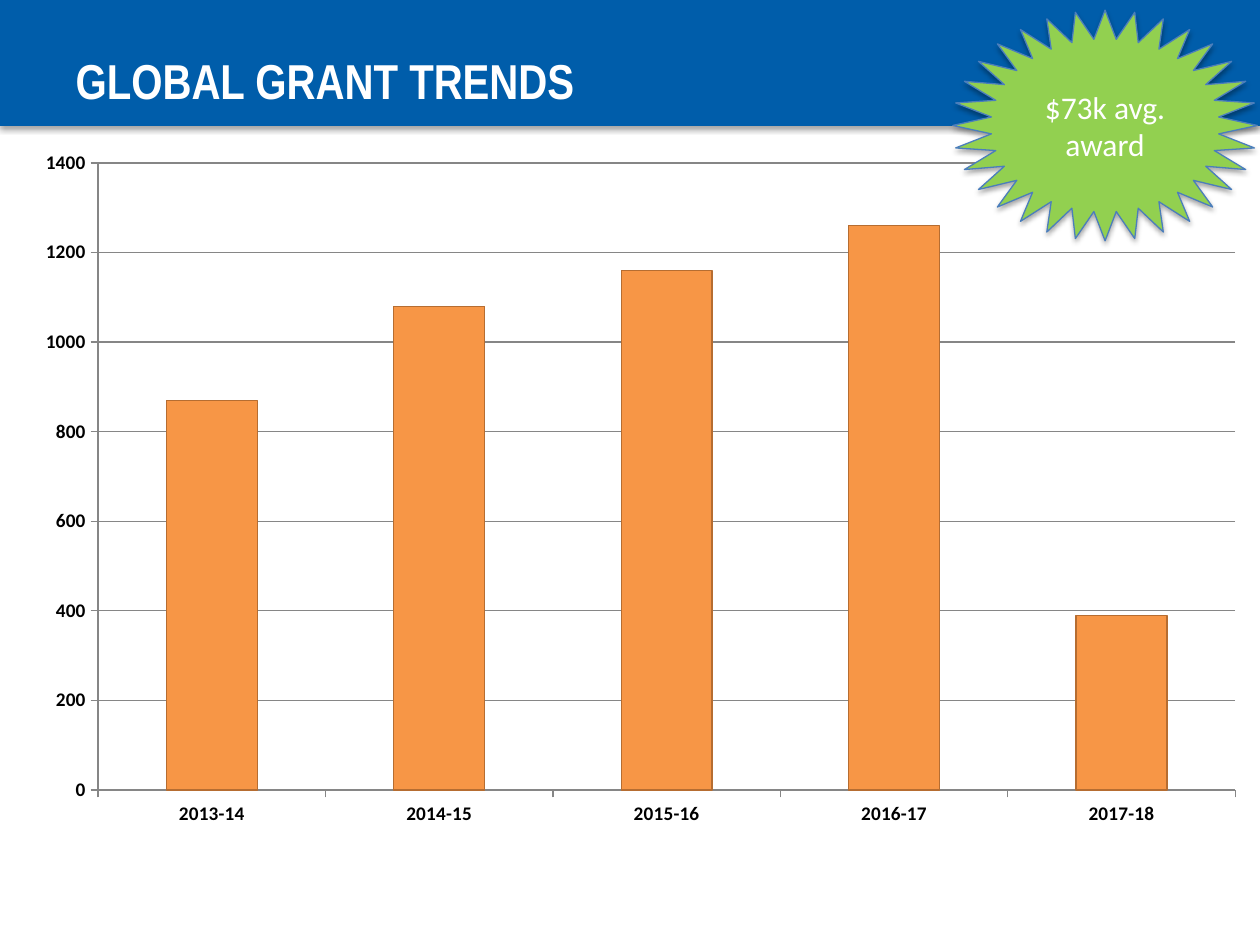
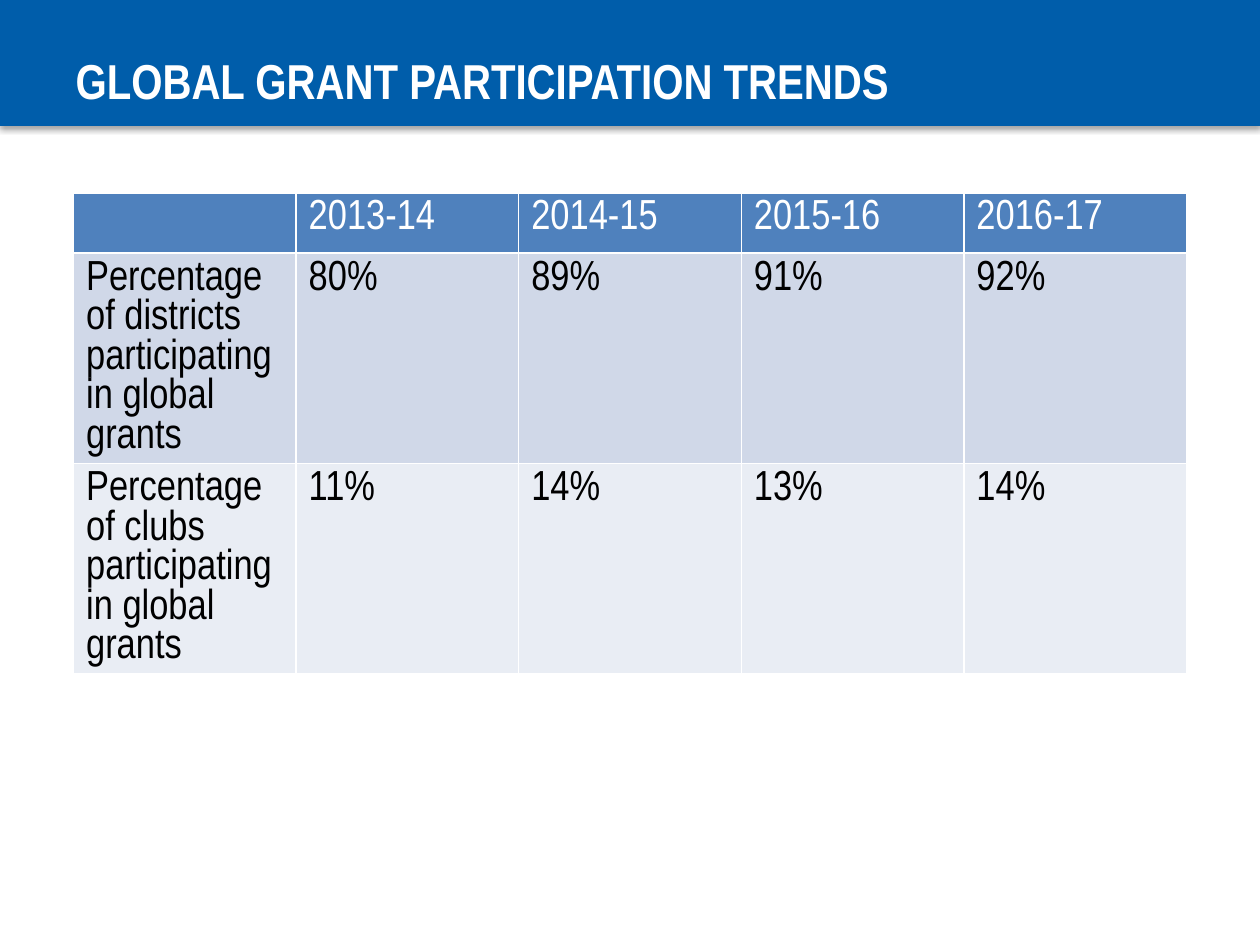
from dataclasses import dataclass

from pptx import Presentation
from pptx.chart.data import CategoryChartData
from pptx.dml.color import RGBColor
from pptx.enum.chart import XL_CHART_TYPE as ChartType, XL_TICK_MARK as TickMark
from pptx.enum.shapes import MSO_SHAPE as Preset
from pptx.enum.text import MSO_ANCHOR as Anchor, MSO_AUTO_SIZE as AutoSize, PP_ALIGN as Align
from pptx.oxml import parse_xml
from pptx.oxml.ns import nsdecls, qn
from pptx.util import Pt

HEADING_FONT = "Arial Narrow"
BODY_FONT = "Calibri"
BLUE = "005DAA"
WHITE = "FFFFFF"
BLACK = "000000"
ORANGE = "F79646"
BAR_EDGE = "B66D31"
AXIS_GREY = "868686"
GREEN = "92D050"
STAR_EDGE = "4B7EBC"
HEADER_FILL = "4F81BD"
ROW_FILLS = ("D0D8E8", "E9EDF4")

GRANTS = {"2013-14": 870, "2014-15": 1080, "2015-16": 1160, "2016-17": 1260, "2017-18": 390}
PARTICIPATION = (
    ("", "2013-14", "2014-15", "2015-16", "2016-17"),
    ("Percentage of districts participating in global grants", "80%", "89%", "91%", "92%"),
    ("Percentage of clubs participating in global grants", "11%", "14%", "13%", "14%"),
)
ROW_HEIGHTS = (34.5, 120, 120)


@dataclass(frozen=True)
class Box:
    left: float
    top: float
    width: float
    height: float

    def lengths(self) -> tuple:
        return Pt(self.left), Pt(self.top), Pt(self.width), Pt(self.height)


@dataclass(frozen=True)
class TextStyle:
    font: str
    size: float
    color: str
    bold: bool = False


TITLE_STYLE = TextStyle(HEADING_FONT, 28, WHITE, True)
STAR_STYLE = TextStyle(BODY_FONT, 18, WHITE)
AXIS_STYLE = TextStyle(BODY_FONT, 11, BLACK, True)
HEADER_STYLE = TextStyle(HEADING_FONT, 24, WHITE)
CELL_STYLE = TextStyle(HEADING_FONT, 24, BLACK)

BAND = Box(0, 0, 720, 72)
TITLE = Box(36, 21.6, 581.8, 38.2)
CHART = Box(12.2, 77.8, 707.8, 401.8)
STAR = Box(544.5, 5.8, 174, 131.8)
TABLE = Box(42, 110.2, 636, sum(ROW_HEIGHTS))


def rgb(value: str) -> RGBColor:
    return RGBColor.from_string(value)


def paint(part, color: str) -> None:
    part.fill.solid()
    part.fill.fore_color.rgb = rgb(color)


def outline(line, color: str) -> None:
    line.color.rgb = rgb(color)
    line.width = Pt(0.75)


def style_font(font, style: TextStyle) -> None:
    font.name = style.font
    font.size = Pt(style.size)
    font.bold = style.bold
    font.color.rgb = rgb(style.color)


def add_run(paragraph, text: str, style: TextStyle) -> None:
    run = paragraph.add_run()
    run.text = text
    style_font(run.font, style)


def add_shadowed_shape(slide, preset, box: Box, fill: str):
    shape = slide.shapes.add_shape(preset, *box.lengths())
    paint(shape, fill)
    shape.line.fill.background()
    shape.shadow.inherit = False
    shape.element.spPr.find(qn("a:effectLst")).append(parse_xml(
        f'<a:outerShdw {nsdecls("a")} blurRad="{Pt(3.1)}" dist="{Pt(1.8)}" dir="5400000" '
        f'rotWithShape="0"><a:srgbClr val="{BLACK}"><a:alpha val="35000"/></a:srgbClr></a:outerShdw>'
    ))
    return shape


def add_band(slide) -> None:
    band = add_shadowed_shape(slide, Preset.RECTANGLE, BAND, BLUE)
    slide.slide_layout.shapes.element.insert(2, band.element)


def add_titled_slide(presentation, text: str):
    slide = presentation.slides.add_slide(presentation.slide_layouts[5])
    title = slide.shapes.title
    title.left, title.top, title.width, title.height = TITLE.lengths()
    frame = title.text_frame
    frame.auto_size = AutoSize.NONE
    frame.vertical_anchor = Anchor.TOP
    frame.margin_top, frame.margin_bottom = Pt(7.2), Pt(0)
    paragraph = frame.paragraphs[0]
    paragraph.alignment = Align.LEFT
    add_run(paragraph, text, TITLE_STYLE)
    return slide


def style_axis(axis) -> None:
    style_font(axis.tick_labels.font, AXIS_STYLE)
    axis.major_tick_mark = TickMark.OUTSIDE
    axis.minor_tick_mark = TickMark.NONE
    outline(axis.format.line, AXIS_GREY)


def add_grant_chart(slide) -> None:
    data = CategoryChartData()
    data.categories = list(GRANTS)
    data.add_series("Series 1", list(GRANTS.values()))
    chart = slide.shapes.add_chart(ChartType.COLUMN_CLUSTERED, *CHART.lengths(), data).chart
    chart.has_legend = False
    chart.has_title = False
    style_font(chart.font, TextStyle(BODY_FONT, 10, BLACK))

    plot = chart.plots[0]
    plot.gap_width = 150
    plot.vary_by_categories = False
    bars = plot.series[0].format
    paint(bars, ORANGE)
    outline(bars.line, BAR_EDGE)

    style_axis(chart.category_axis)
    values = chart.value_axis
    style_axis(values)
    values.minimum_scale, values.maximum_scale, values.major_unit = 0, 1400, 200
    values.tick_labels.number_format = "0"
    values.tick_labels.number_format_is_linked = False
    outline(values.major_gridlines.format.line, AXIS_GREY)

    plot_area = chart.element.chart.plotArea
    for layout in plot_area.findall(qn("c:layout")):
        plot_area.remove(layout)
    plot_area.insert(0, parse_xml(
        f'<c:layout {nsdecls("c")}><c:manualLayout><c:layoutTarget val="inner"/>'
        '<c:xMode val="edge"/><c:yMode val="edge"/><c:x val="0.062"/><c:y val="0.038"/>'
        '<c:w val="0.918"/><c:h val="0.892"/></c:manualLayout></c:layout>'
    ))


def add_award_star(slide) -> None:
    star = add_shadowed_shape(slide, Preset.STAR_32_POINT, STAR, GREEN)
    outline(star.line, STAR_EDGE)
    frame = star.text_frame
    frame.word_wrap = True
    frame.vertical_anchor = Anchor.MIDDLE
    paragraph = frame.paragraphs[0]
    paragraph.alignment = Align.CENTER
    add_run(paragraph, "$73k avg. award", STAR_STYLE)


def add_participation_table(slide) -> None:
    column_count = len(PARTICIPATION[0])
    table = slide.shapes.add_table(len(PARTICIPATION), column_count, *TABLE.lengths()).table
    for column in table.columns:
        column.width = Pt(TABLE.width / column_count)
    fills = (HEADER_FILL, *ROW_FILLS)
    for row, texts, height, fill in zip(table.rows, PARTICIPATION, ROW_HEIGHTS, fills):
        row.height = Pt(height)
        style = HEADER_STYLE if fill == HEADER_FILL else CELL_STYLE
        for cell, text in zip(row.cells, texts):
            paint(cell, fill)
            if text:
                paragraph = cell.text_frame.paragraphs[0]
                paragraph.line_spacing = Pt(22.6)
                add_run(paragraph, text, style)


def main() -> None:
    presentation = Presentation()
    presentation.slide_width, presentation.slide_height = Pt(720), Pt(540)

    trends = add_titled_slide(presentation, "GLOBAL GRANT TRENDS")
    add_band(trends)
    add_grant_chart(trends)
    add_award_star(trends)

    participation = add_titled_slide(presentation, "GLOBAL GRANT PARTICIPATION TRENDS")
    add_participation_table(participation)

    presentation.save("out.pptx")


if __name__ == "__main__":
    main()
